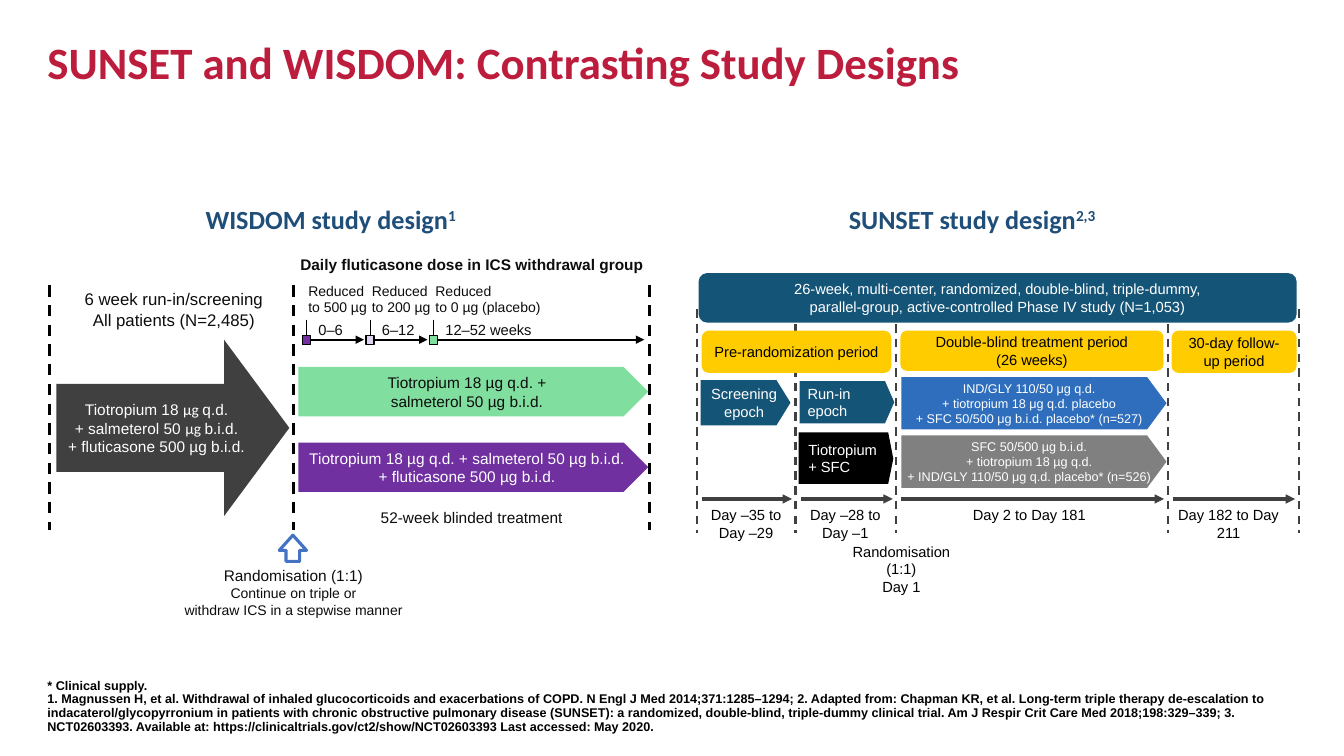
import pptx
import pptx.util
import pptx.dml.color
import pptx.enum.dml
import pptx.enum.shapes
import pptx.enum.text
import lxml.etree

RGB = pptx.dml.color.RGBColor
SHAPE = pptx.enum.shapes.MSO_SHAPE
ALIGN = pptx.enum.text.PP_ALIGN
ANCHOR = pptx.enum.text.MSO_ANCHOR
A = "{http://schemas.openxmlformats.org/drawingml/2006/main}"

CRIMSON = RGB(0xBD, 0x1D, 0x3D)
NAVY = RGB(0x1F, 0x4E, 0x79)
TEAL = RGB(0x14, 0x54, 0x77)
BLUE = RGB(0x2E, 0x6E, 0xBC)
SKY = RGB(0x44, 0x72, 0xC4)
PURPLE = RGB(0x70, 0x30, 0xA0)
LILAC = RGB(0xDC, 0xD3, 0xF1)
GREEN = RGB(0x80, 0xDE, 0x9F)
YELLOW = RGB(0xFF, 0xCC, 0x00)
CHARCOAL = RGB(0x40, 0x40, 0x40)
GREY = RGB(0x80, 0x80, 0x80)
INK = RGB(0x0D, 0x0D, 0x0D)
BLACK = RGB(0, 0, 0)
WHITE = RGB(0xFF, 0xFF, 0xFF)

CELL = 0.1  # inches per column and per row of the grid
DEFAULT_INSETS = (0.1, 0.05, 0.1, 0.05)
ARM_INSETS = (0.08, 0, 0.08, 0)
NO_INSETS = (0, 0, 0, 0)


def grid(box, col, row):
    """Slide position of a column and row counted from the box's corner."""
    return pptx.util.Inches(box[0] + col * CELL), pptx.util.Inches(box[1] + row * CELL)


def place(box, at):
    return *grid(box, *at[:2]), *grid((0, 0), *at[2:])


def write(sp, paras, size, color=INK, bold=False, font="Arial", align=ALIGN.CENTER,
          anchor=ANCHOR.MIDDLE, insets=DEFAULT_INSETS, wrap=True, spacing=None):
    """Fill a shape with paragraphs given as (text, size), text, or lists of (text, font) runs."""
    tf = sp.text_frame
    tf.word_wrap = wrap
    tf.vertical_anchor = anchor
    tf.margin_left, tf.margin_top, tf.margin_right, tf.margin_bottom = map(pptx.util.Inches, insets)
    for i, para in enumerate(paras):
        p = tf.add_paragraph() if i else tf.paragraphs[0]
        text, points = para if isinstance(para, tuple) else (para, size)
        if isinstance(text, str):
            p.text = text
        else:
            for words, face in text:
                r = p.add_run()
                r.text = words
                r.font.name = face
        p.alignment = align
        if spacing:
            p.line_spacing = spacing
        p.font.size = pptx.util.Pt(points)
        p.font.name = font
        p.font.bold = bold
        p.font.color.rgb = color


def dress(sp, fill=None, line=None, width=0.75):
    sp.shadow.inherit = False
    if fill is None:
        sp.fill.background()
    else:
        sp.fill.solid()
        sp.fill.fore_color.rgb = fill
    if line is None:
        sp.line.fill.background()
    else:
        sp.line.color.rgb = line
        sp.line.width = pptx.util.Pt(width)


def shape(s, box, kind, at, fill=None, line=None, width=0.75, adj=()):
    sp = s.shapes.add_shape(kind, *place(box, at))
    dress(sp, fill, line, width)
    for i, value in enumerate(adj):
        sp.adjustments[i] = value
    return sp


def label(s, box, at, paras, size, anchor=ANCHOR.TOP, **style):
    sp = s.shapes.add_textbox(*place(box, at))
    write(sp, paras, size, anchor=anchor, **style)
    return sp


def rule(s, box, start, end, color, width, dash=False, arrow=False):
    cx = s.shapes.add_connector(pptx.enum.shapes.MSO_CONNECTOR.STRAIGHT,
                                *grid(box, *start), *grid(box, *end))
    cx.line.color.rgb = color
    cx.line.width = pptx.util.Pt(width)
    if dash:
        cx.line.dash_style = pptx.enum.dml.MSO_LINE.DASH
    props = cx._element.spPr
    if arrow:
        lxml.etree.SubElement(props.find(A + "ln"), A + "tailEnd", type="triangle")
    lxml.etree.SubElement(props, A + "effectLst")


def heading(s, box, col, text, marks):
    sp = label(s, box, (col, 0, 31.9, 4.2), [[(text, "Calibri"), (marks, "Calibri")]], 18.7,
               color=NAVY, bold=True, font="Calibri", align=ALIGN.LEFT)
    sp.text_frame.paragraphs[0].runs[1]._r.get_or_add_rPr().set("baseline", "30000")


def wisdom(s, box):
    heading(s, box, 14.5, "WISDOM study design", "1")
    for col in (0, 24.2, 59.5):
        rule(s, box, (col, 8.6), (col, 32.9), BLACK, 2, dash=True)

    # Run-in
    label(s, box, (0.2, 8.5, 24.3, 5), ["6 week run-in/screening", "All patients (N=2,485)"], 12)
    sp = shape(s, box, SHAPE.RIGHT_ARROW, (0.7, 14, 23.1, 17.5), CHARCOAL, adj=(0.5, 0.37))
    write(sp, [[("Tiotropium 18 ", "Arial"), ("µg ", "Calibri"), ("q.d.", "Arial")],
               [("+ salmeterol 50 ", "Arial"), ("µg ", "Calibri"), ("b.i.d.", "Arial")],
               "+ fluticasone 500 µg b.i.d."], 11, WHITE)

    # Treatment arms
    arms = [(16.7, GREEN, INK, ["Tiotropium 18 µg q.d. +", "salmeterol 50 µg b.i.d."]),
            (24.2, PURPLE, WHITE, ["Tiotropium 18 µg q.d. + salmeterol 50 µg b.i.d.",
                                   "+ fluticasone 500 µg b.i.d."])]
    for row, fill, color, paras in arms:
        sp = shape(s, box, SHAPE.PENTAGON, (24.7, row, 34.7, 4.9), fill, adj=(0.5,))
        write(sp, paras, 11, color, insets=ARM_INSETS, wrap=False)
    label(s, box, (24.2, 30.2, 35.4, 2.9), ["52-week blinded treatment"], 11)

    # Stepwise dose reduction
    label(s, box, (23.9, 5.1, 38.1, 2.9), ["Daily fluticasone dose in ICS withdrawal group"], 11,
          bold=True, align=ALIGN.LEFT)
    steps = [(PURPLE, "500 µg", 8, "0‒6", 4.5, 5.7), (LILAC, "200 µg", 8, "6–12", 5.3, 5.7),
             (GREEN, "0 µg (placebo)", 12.5, "12–52 weeks", 11.5, 20.9)]
    for i, (fill, dose, dose_width, weeks, weeks_width, reach) in enumerate(steps):
        col = 25.5 + 6.3 * i
        rule(s, box, (col, 12), (col, 14.5), BLACK, 0.5)
        rule(s, box, (col + 0.4, 14), (col + reach, 14), BLACK, 1.5, arrow=True)
        shape(s, box, SHAPE.RECTANGLE, (col - 0.4, 13.6, 0.8, 0.9), fill, BLACK)
        label(s, box, (col - 0.8, 7.8, dose_width, 4.4), ["Reduced\nto " + dose], 10,
              align=ALIGN.LEFT, wrap=False)
        label(s, box, (col + 0.2, 11.6, weeks_width, 2.8), [weeks], 10.5,
              align=ALIGN.LEFT, wrap=False)

    # Randomisation
    shape(s, box, SHAPE.UP_ARROW, (22.8, 33.4, 2.7, 2.6), None, SKY, 2.25, adj=(0.5, 0.58))
    label(s, box, (12.3, 36, 23.8, 6.2),
          ["Randomisation (1:1)",
           ("Continue on triple or\nwithdraw ICS in a stepwise manner", 10)], 11, wrap=False)


def sunset(s, box):
    heading(s, box, 14.1, "SUNSET study design", "2,3")

    # Time axis
    edges = [0, 9.8, 19.8, 46.7, 59.7]
    days = [("Day –35 to\nDay –29", 8.9), ("Day –28 to\nDay –1", 9),
            ("Day 2 to Day 181", 25.5), ("Day 182 to Day 211", 11.2)]
    for start, end, (text, width) in zip(edges, edges[1:], days):
        sp = shape(s, box, SHAPE.ROUNDED_RECTANGLE, (start + 0.45, 30.3, width, 4), WHITE)
        write(sp, [text], 10.5, BLACK, anchor=ANCHOR.TOP, insets=NO_INSETS)
        rule(s, box, (start + 0.5, 29.8), (end - 0.35, 29.8), CHARCOAL, 2.25, arrow=True)
    for col in edges:
        rule(s, box, (col, 11), (col, 33.2), CHARCOAL, 1.5, dash=True)
    sp = shape(s, box, SHAPE.RECTANGLE, (13.2, 35.7, 14.2, 2.1), WHITE)
    write(sp, ["Randomisation (1:1)", "Day 1"], 10.5, BLACK)

    # Banner and periods
    sp = shape(s, box, SHAPE.ROUNDED_RECTANGLE, (0.2, 7.4, 59.3, 4.9), TEAL)
    write(sp, ["26-week, multi-center, randomized, double-blind, triple-dummy,\n"
               "parallel-group, active-controlled Phase IV study (N=1,053)"],
          10.5, WHITE, insets=NO_INSETS)
    periods = [(0.5, 18.8, 4.2, ["Pre-randomization period"]),
               (20.2, 26.1, 4, ["Double-blind treatment period", "(26 weeks)"]),
               (47.1, 12.4, 4.2, ["30-day follow-up period"])]
    for col, width, height, paras in periods:
        sp = shape(s, box, SHAPE.ROUNDED_RECTANGLE, (col, 13.1, width, height), YELLOW)
        write(sp, paras, 10.5, BLACK)

    # Epochs
    sp = shape(s, box, SHAPE.PENTAGON, (0.4, 18, 8.9, 4.5), TEAL, adj=(0.31,))
    write(sp, ["Screening epoch"], 10.5, WHITE, insets=(0.04, 0.05, 0, 0.05))
    sp = shape(s, box, SHAPE.PENTAGON, (10.2, 18.1, 9.4, 4.2), TEAL, adj=(0.22,))
    write(sp, ["Run-in", "epoch"], 10.5, WHITE, align=ALIGN.LEFT, insets=ARM_INSETS, wrap=False)
    corners = [(19, 23.2), (19.5, 25.8), (19, 28.3), (10.1, 28.3)]
    outline = s.shapes.build_freeform(*grid(box, 10.1, 23.2))
    outline.add_line_segments([grid(box, *corner) for corner in corners])
    sp = outline.convert_to_shape()
    dress(sp, BLACK)
    write(sp, ["Tiotropium + SFC"], 10.5, WHITE, align=ALIGN.LEFT)

    # Treatment arms
    arms = [(17.7, BLUE, ["IND/GLY 110/50 μg q.d.", "+ tiotropium 18 μg q.d. placebo",
                          "+ SFC 50/500 μg b.i.d. placebo* (n=527)"]),
            (23.5, GREY, ["SFC 50/500 µg b.i.d.", "+ tiotropium 18 µg q.d.",
                          "+ IND/GLY 110/50 μg q.d. placebo* (n=526)"])]
    for row, fill, paras in arms:
        sp = shape(s, box, SHAPE.PENTAGON, (20.3, row, 26.3, 5.2), fill, adj=(0.37,))
        write(sp, paras, 9, WHITE, insets=ARM_INSETS, wrap=False)


def title_and_sources(s, box):
    label(s, box, (0, 0, 123.9, 14.5), ["SUNSET and WISDOM: Contrasting Study Designs"], 32,
          color=CRIMSON, bold=True, font="Calibri", align=ALIGN.LEFT, insets=NO_INSETS, spacing=0.9)
    label(s, box, (0, 63.9, 123.9, 4.9),
          ["* Clinical supply.\n1. Magnussen H, et al. Withdrawal of inhaled glucocorticoids and "
           "exacerbations of COPD. N Engl J Med 2014;371:1285–1294; 2. Adapted from: Chapman KR, et al. "
           "Long-term triple therapy de-escalation to indacaterol/glycopyrronium in patients with chronic "
           "obstructive pulmonary disease (SUNSET): a randomized, double-blind, triple-dummy clinical trial. "
           "Am J Respir Crit Care Med 2018;198:329–339; 3. NCT02603393. Available at: "
           "https://clinicaltrials.gov/ct2/show/NCT02603393 Last accessed: May 2020."], 9,
          color=BLACK, bold=True, align=ALIGN.LEFT, anchor=ANCHOR.BOTTOM, insets=NO_INSETS, spacing=0.9)


def main():
    prs = pptx.Presentation()
    prs.slide_width, prs.slide_height = pptx.util.Inches(13.33), pptx.util.Inches(7.5)
    s = prs.slides.add_slide(prs.slide_layouts[6])
    title_and_sources(s, (0.47, 0.4))
    wisdom(s, (0.49, 1.97))
    sunset(s, (6.91, 1.97))
    prs.save("out.pptx")


if __name__ == "__main__":
    main()
